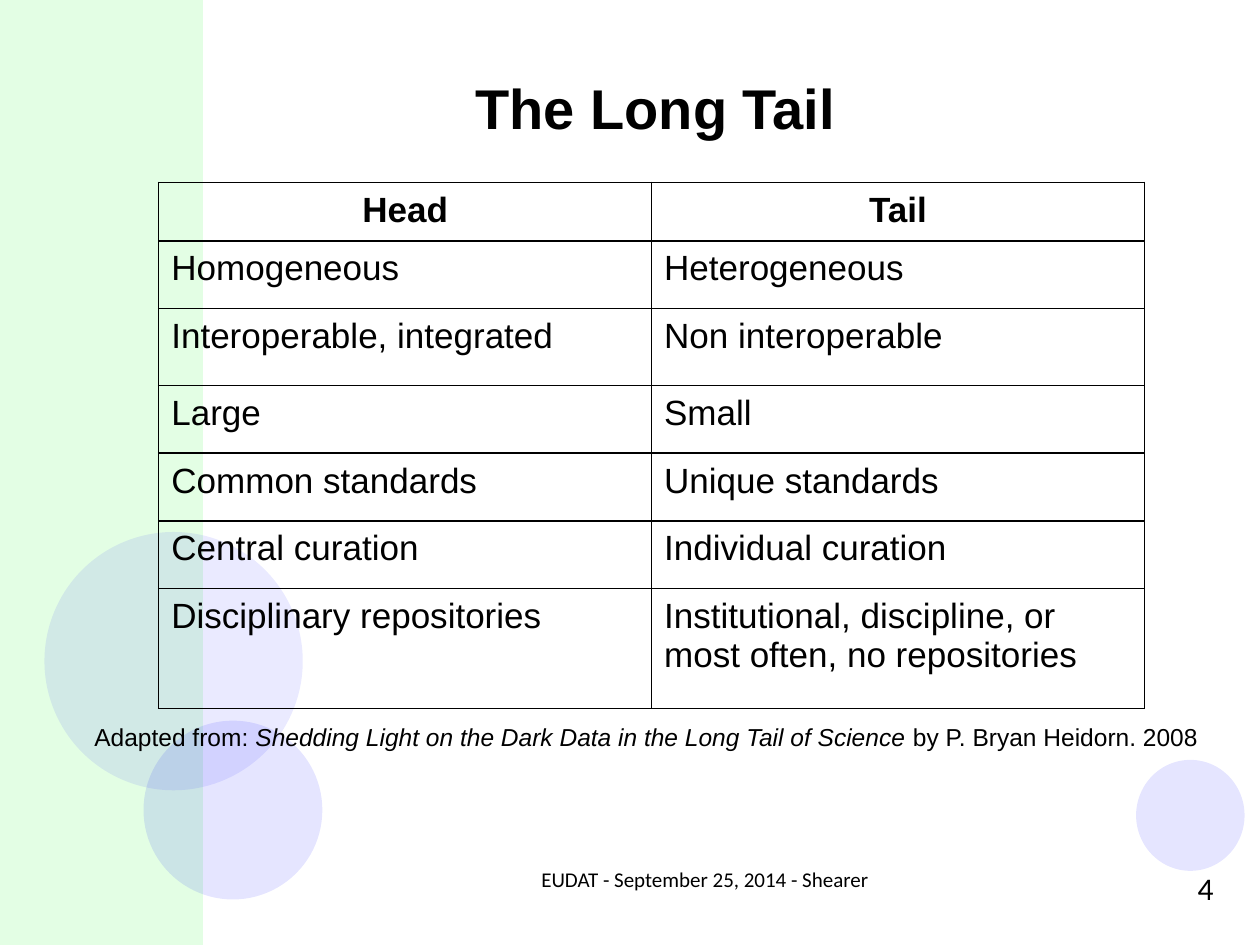
"""Build the "The Long Tail" comparison slide."""
import pptx
import pptx.dml.color
import pptx.enum.shapes
import pptx.enum.text
import pptx.oxml
import pptx.oxml.ns
import pptx.util

Pt = pptx.util.Pt
ALIGN = pptx.enum.text.PP_ALIGN
ANCHOR = pptx.enum.text.MSO_ANCHOR
SHAPE = pptx.enum.shapes.MSO_SHAPE

COLORS = {"band": "CEFECF", "large": "3333FF", "small": "0000FF", "ink": "000000"}

DECORATIONS = [
    (SHAPE.RECTANGLE, (0, 0, 116, 540), "band", 56),
    (SHAPE.OVAL, (25.4, 304, 147.6, 147.6), "large", 10),
    (SHAPE.OVAL, (82, 411.8, 102.2, 102.2), "small", 10),
    (SHAPE.OVAL, (649.2, 434.2, 62, 63.4), "small", 10),
]

TITLE = [("The Long Tail", False)]
CAPTION = [
    ("Adapted from: ", False),
    ("Shedding Light on the Dark Data in the Long Tail of Science ", True),
    ("by P. Bryan Heidorn. 2008", False),
]
FOOTER = [("EUDAT - September 25, 2014 - Shearer", False)]
PAGE_NUMBER = [("4", False)]

ROWS = [
    ("Head", "Tail"),
    ("Homogeneous", "Heterogeneous"),
    ("Interoperable, integrated", "Non interoperable"),
    ("Large", "Small"),
    ("Common standards", "Unique standards"),
    ("Central curation", "Individual curation"),
    ("Disciplinary repositories", "Institutional, discipline, or most often, no repositories"),
]
ROW_HEIGHTS = [32, 38.7, 44, 38.7, 38.7, 38.7, 68.6]
TABLE_LEFT, TABLE_TOP, COLUMN_WIDTH = 90.7, 104.2, 281.6


def rgb(name):
    return pptx.dml.color.RGBColor.from_string(COLORS[name])


def style_run(run, size, font="Arial", bold=False, italic=False):
    run.font.size = Pt(size)
    run.font.name = font
    run.font.bold = bold
    run.font.italic = italic
    run.font.color.rgb = rgb("ink")


def add_decoration(slide, kind, box, color, opacity):
    shape = slide.shapes.add_shape(kind, *map(Pt, box))
    shape.shadow.inherit = False
    shape.line.fill.background()
    shape.fill.solid()
    shape.fill.fore_color.rgb = rgb(color)
    color_element = shape.fill._xPr.find(".//" + pptx.oxml.ns.qn("a:srgbClr"))
    alpha = pptx.oxml.parse_xml(f'<a:alpha {pptx.oxml.ns.nsdecls("a")} val="{opacity * 1000}"/>')
    color_element.append(alpha)


def add_text(slide, box, pieces, size, align, font="Arial", bold=False):
    text_box = slide.shapes.add_textbox(*map(Pt, box))
    frame = text_box.text_frame
    frame.word_wrap = True
    paragraph = frame.paragraphs[0]
    paragraph.alignment = align
    for text, italic in pieces:
        run = paragraph.add_run()
        run.text = text
        style_run(run, size, font, bold, italic)
    return frame


def add_borders(cell):
    properties = cell._tc.get_or_add_tcPr()
    for position, side in enumerate(("lnL", "lnR", "lnT", "lnB")):
        border = pptx.oxml.parse_xml(
            f'<a:{side} {pptx.oxml.ns.nsdecls("a")} w="{Pt(1)}"><a:solidFill>'
            f'<a:srgbClr val="{COLORS["ink"]}"/></a:solidFill></a:{side}>'
        )
        properties.insert(position, border)


def add_comparison(slide):
    frame = slide.shapes.add_table(
        len(ROWS), 2, Pt(TABLE_LEFT), Pt(TABLE_TOP), Pt(2 * COLUMN_WIDTH), Pt(sum(ROW_HEIGHTS))
    )
    table = frame.table
    table.horz_banding = False
    for column in table.columns:
        column.width = Pt(COLUMN_WIDTH)
    for row_index, (texts, height) in enumerate(zip(ROWS, ROW_HEIGHTS)):
        table.rows[row_index].height = Pt(height)
        is_header = row_index == 0
        for column_index, text in enumerate(texts):
            cell = table.cell(row_index, column_index)
            cell.margin_left = cell.margin_right = Pt(7.2)
            cell.margin_top = cell.margin_bottom = Pt(4.7)
            cell.fill.background()
            add_borders(cell)
            cell.text_frame.text = text
            paragraph = cell.text_frame.paragraphs[0]
            paragraph.alignment = ALIGN.CENTER if is_header else ALIGN.LEFT
            style_run(paragraph.runs[0], 20, bold=is_header)


def main():
    presentation = pptx.Presentation()
    presentation.slide_width, presentation.slide_height = Pt(720), Pt(540)
    slide = presentation.slides.add_slide(presentation.slide_layouts[6])
    for decoration in DECORATIONS:
        add_decoration(slide, *decoration)

    title = add_text(slide, (66.2, 23.8, 617, 64), TITLE, 32, ALIGN.CENTER, bold=True)
    title.vertical_anchor = ANCHOR.BOTTOM
    title.margin_top = title.margin_bottom = Pt(7.2)

    add_comparison(slide)

    caption = add_text(slide, (46.8, 409, 649.4, 41), CAPTION, 14, ALIGN.LEFT)
    caption.word_wrap = False
    caption.auto_size = pptx.enum.text.MSO_AUTO_SIZE.SHAPE_TO_FIT_TEXT

    add_text(slide, (201.6, 491.8, 402.5, 37.4), FOOTER, 12, ALIGN.CENTER, "Calibri")
    add_text(slide, (655.2, 493.2, 45.4, 37.4), PAGE_NUMBER, 18, ALIGN.RIGHT, "Calibri")
    presentation.save("out.pptx")


if __name__ == "__main__":
    main()
